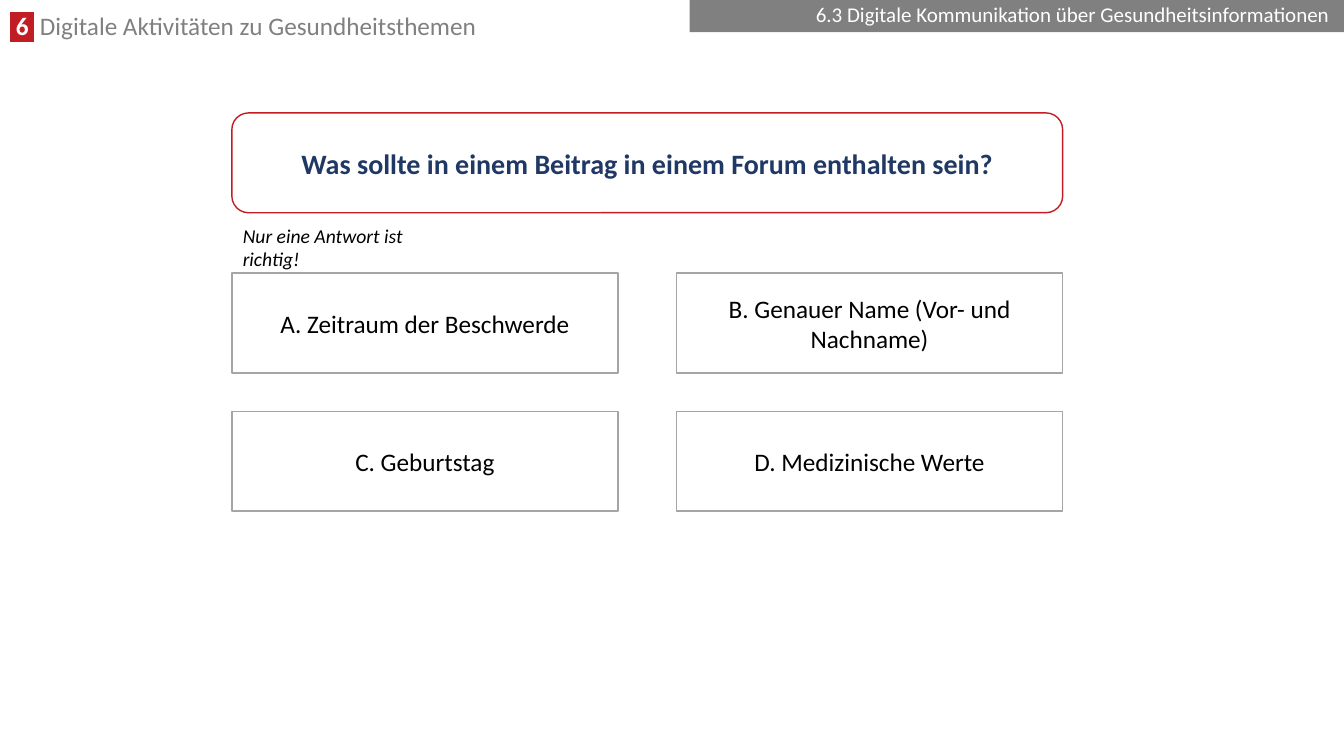
from lxml import etree
from pptx import Presentation
from pptx.dml.color import RGBColor
from pptx.enum.shapes import MSO_SHAPE as Preset
from pptx.enum.text import MSO_ANCHOR as Anchor, MSO_AUTO_SIZE as AutoSize, PP_ALIGN as Align
from pptx.oxml.ns import qn
from pptx.util import Inches, Pt

FONT = "Calibri"
RED, GREY, BORDER, NAVY = "C01E24", "808080", "A5A5A5", "203864"
WHITE, BLACK = "FFFFFF", "000000"

# Answer grid in inches
LEFT, TOP = 2.3, 2.71
COLUMN_STEP, ROW_STEP = 4.41, 1.37
BOX_WIDTH, BOX_HEIGHT = 3.83, 0.99
GRID_WIDTH = COLUMN_STEP + BOX_WIDTH

ANSWERS = [
    "A. Zeitraum der Beschwerde",
    "B. Genauer Name (Vor- und Nachname)",
    "C. Geburtstag",
    "D. Medizinische Werte",
]


def color(hex_value):
    return RGBColor.from_string(hex_value)


def add_run(paragraph, text, size, hex_value, bold=False, italic=False):
    run = paragraph.add_run()
    run.text = text
    font = run.font
    font.name, font.size, font.bold, font.italic = FONT, Pt(size), bold, italic
    font.color.rgb = color(hex_value)
    return run


def highlight(run, hex_value):
    mark = etree.Element(qn("a:highlight"))
    etree.SubElement(mark, qn("a:srgbClr")).set("val", hex_value)
    run.font._element.find(qn("a:solidFill")).addnext(mark)


def place(shape, left, top, width, height):
    shape.left, shape.top = Inches(left), Inches(top)
    shape.width, shape.height = Inches(width), Inches(height)


def add_box(slide, preset, area, fill, line=None):
    """Add a filled box and return its first paragraph."""
    shape = slide.shapes.add_shape(preset, *map(Inches, area))
    shape.shadow.inherit = False
    shape.fill.solid()
    shape.fill.fore_color.rgb = color(fill)
    if line:
        shape.line.color.rgb = color(line)
        shape.line.width = Pt(1)
    else:
        shape.line.fill.background()
    frame = shape.text_frame
    frame.word_wrap = True
    frame.vertical_anchor = Anchor.MIDDLE
    paragraph = frame.paragraphs[0]
    paragraph.alignment = Align.CENTER
    return paragraph


def add_heading(slide):
    title = slide.shapes.title
    place(title, 0, 0.11, 9.52, 0.35)
    frame = title.text_frame
    frame.vertical_anchor = Anchor.TOP
    frame.auto_size = AutoSize.NONE
    paragraph = frame.paragraphs[0]
    paragraph.alignment = Align.LEFT
    paragraph.line_spacing = 0.8
    highlight(add_run(paragraph, " 6 ", 18, WHITE, bold=True), RED)
    add_run(paragraph, " Digitale Aktivitäten zu Gesundheitsthemen", 18, GREY)


def add_question(slide):
    area = (LEFT, 1.12, GRID_WIDTH, BOX_HEIGHT)
    paragraph = add_box(slide, Preset.ROUNDED_RECTANGLE, area, WHITE, RED)
    add_run(paragraph, "Was sollte in einem Beitrag in einem Forum enthalten sein?",
            20, NAVY, bold=True)


def add_answers(slide):
    for index, answer in enumerate(ANSWERS):
        row, column = divmod(index, 2)
        area = (LEFT + column * COLUMN_STEP, TOP + row * ROW_STEP, BOX_WIDTH, BOX_HEIGHT)
        add_run(add_box(slide, Preset.RECTANGLE, area, WHITE, BORDER), answer, 18, BLACK)


def add_hint(slide):
    hint = slide.shapes.add_textbox(*map(Inches, (2.31, 2.17, 2.1, 0.34)))
    hint.text_frame.word_wrap = True
    add_run(hint.text_frame.paragraphs[0], "Nur eine Antwort ist richtig!",
            14, BLACK, italic=True)


def add_section_bar(slide):
    paragraph = add_box(slide, Preset.RECTANGLE, (6.84, 0, 6.49, 0.32), GREY)
    paragraph.alignment = Align.RIGHT
    paragraph.line_spacing = 0.9
    add_run(paragraph, "6.3 Digitale Kommunikation über Gesundheitsinformationen ", 15, WHITE)


def main():
    presentation = Presentation()
    presentation.slide_width, presentation.slide_height = Inches(13.33), Inches(7.5)
    slide = presentation.slides.add_slide(presentation.slide_layouts[5])

    # Header
    add_heading(slide)
    add_section_bar(slide)

    # Quiz
    add_question(slide)
    add_answers(slide)
    add_hint(slide)

    presentation.save("out.pptx")


if __name__ == "__main__":
    main()
